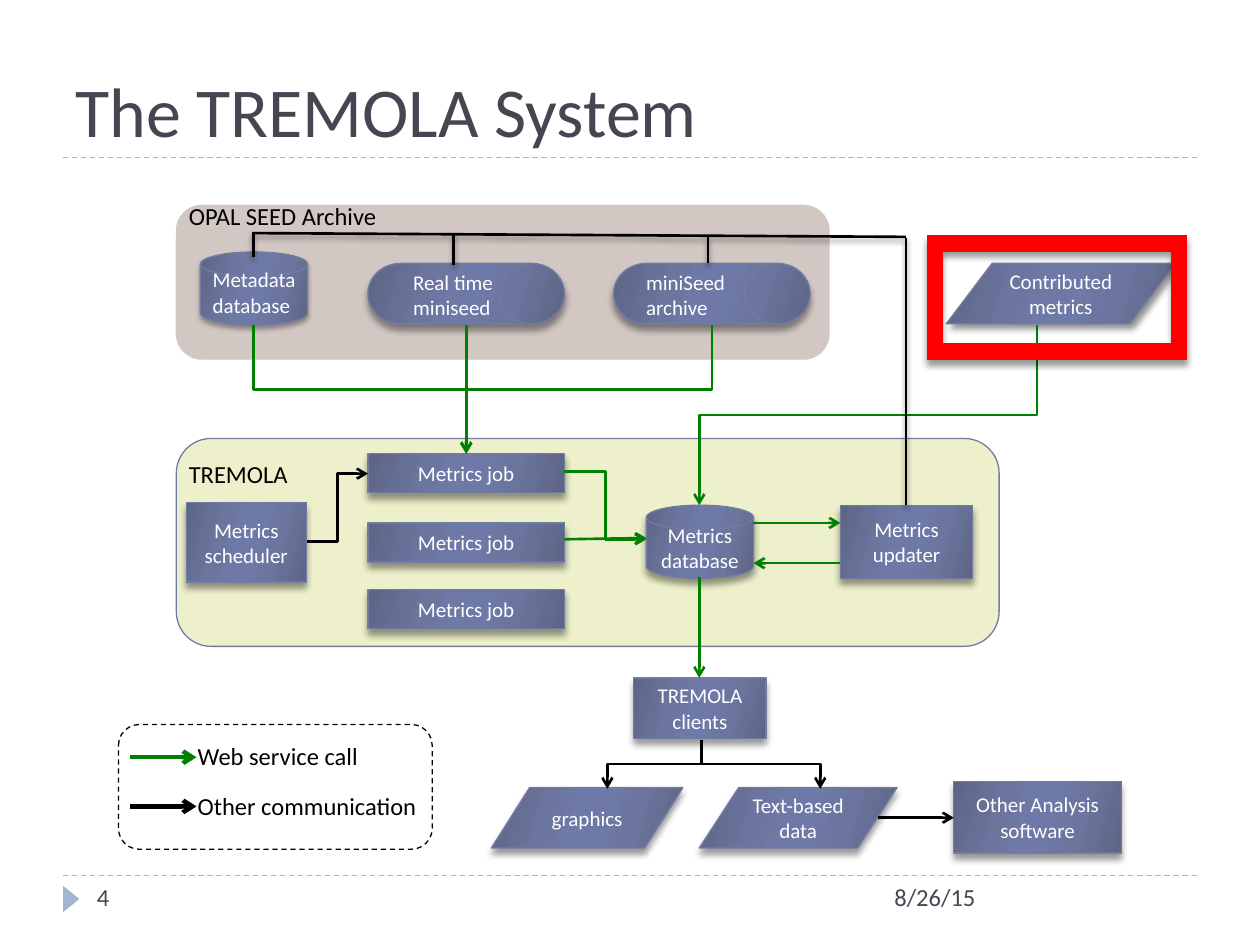
from lxml import etree
from pptx import Presentation
from pptx.dml.color import RGBColor
from pptx.enum.dml import MSO_LINE
from pptx.enum.shapes import MSO_CONNECTOR, MSO_SHAPE
from pptx.enum.text import MSO_ANCHOR, PP_ALIGN
from pptx.oxml.ns import qn
from pptx.util import Inches, Pt

PROCESS = MSO_SHAPE.FLOWCHART_PROCESS
DATA = MSO_SHAPE.FLOWCHART_DATA
DISK = MSO_SHAPE.FLOWCHART_MAGNETIC_DISK
DRUM = MSO_SHAPE.FLOWCHART_DIRECT_ACCESS_STORAGE
ROUNDED = MSO_SHAPE.ROUNDED_RECTANGLE
TRIANGLE = MSO_SHAPE.ISOSCELES_TRIANGLE
FRAME = MSO_SHAPE.FRAME
STRAIGHT, ELBOW = MSO_CONNECTOR.STRAIGHT, MSO_CONNECTOR.ELBOW
DASH = MSO_LINE.DASH
TOP, MIDDLE, BOTTOM = MSO_ANCHOR.TOP, MSO_ANCHOR.MIDDLE, MSO_ANCHOR.BOTTOM
LEFT, CENTER = PP_ALIGN.LEFT, PP_ALIGN.CENTER

FONT = "Calibri"
BLACK, WHITE, GREEN, RED = "000000", "FFFFFF", "008000", "FF0000"
SLATE, RULE, BORDER = "464653", "9FB8CD", "727CA3"
STOPS = [(0, "5D6585"), (30, "6B759E"), (45, "6E79A7"),
         (55, "6E79A7"), (73, "6B759E"), (100, "5D6585")]
NODE_SHADOW = (40, 4, 3.4, 90)
DISK_SHADOW = (35, 3.1, 1.8, 90)
INPUT_SHADOW = (43, 4, 3, 45)
LINE_SHADOW = (40, 3, 2, 90)


def color(value):
    """Turn a hex string into a colour."""
    return RGBColor.from_string(value)


def add_shadow(effects, shadow):
    """Put an outer shadow (opacity, blur, distance, angle) in an effect list."""
    opacity, blur, distance, angle = shadow
    outer = etree.SubElement(effects, qn("a:outerShdw"), blurRad=str(Pt(blur)),
                             dist=str(Pt(distance)), dir=str(angle * 60000),
                             rotWithShape="0")
    tone = etree.SubElement(outer, qn("a:srgbClr"), val=BLACK)
    etree.SubElement(tone, qn("a:alpha"), val=str(opacity * 1000))


def fill_gradient(shape):
    """Fill a shape with the slate gradient."""
    shape.fill.gradient()
    shape.fill.gradient_angle = 344
    stops = shape.fill._xPr.find(".//" + qn("a:gsLst"))
    for stop in list(stops):
        stops.remove(stop)
    for position, tone in STOPS:
        stop = etree.SubElement(stops, qn("a:gs"), pos=str(position * 1000))
        etree.SubElement(stop, qn("a:srgbClr"), val=tone)


def write(shape, lines, size, tone, align=LEFT, anchor=TOP, wrap=True, gap=0):
    """Write one paragraph for each line of text."""
    frame = shape.text_frame
    frame.word_wrap = wrap
    frame.vertical_anchor = anchor
    for index, line in enumerate(lines):
        para = frame.add_paragraph() if index else frame.paragraphs[0]
        para.alignment = align
        para.space_before = Pt(gap if index else 0)
        span = para.add_run()
        span.text = line
        span.font.color.rgb = color(tone)
        for name, value in {"name": FONT, "size": Pt(size)}.items():
            setattr(span.font, name, value)


def add_text(page, place, lines, size=14, tone=BLACK, **layout):
    """Add a text box."""
    box = page.shapes.add_textbox(*map(Inches, place))
    write(box, lines, size, tone, **layout)


def add_panel(page, kind, place, fill=None, border=None, dash=None, shadow=None):
    """Add a shape with a plain fill or none."""
    shape = page.shapes.add_shape(kind, *map(Inches, place))
    if fill:
        shape.fill.solid()
        shape.fill.fore_color.rgb = color(fill)
    else:
        shape.fill.background()
    if border:
        shape.line.color.rgb = color(border)
        shape.line.width = Pt(0.75)
        shape.line.dash_style = dash
    else:
        shape.line.fill.background()
    shape.shadow.inherit = False
    if shadow:
        add_shadow(shape._element.spPr.find(qn("a:effectLst")), shadow)
    return shape


def add_node(page, kind, place, label=None, shadow=NODE_SHADOW):
    """Add a gradient diagram node with a centred label."""
    node = add_panel(page, kind, place, border=BORDER, shadow=shadow)
    fill_gradient(node)
    if label:
        write(node, [label], 12, WHITE, align=CENTER, anchor=MIDDLE)


def finish_line(line, tone, width, arrow=True, dash=None, shadow=None):
    """Set the stroke, arrowhead and effects of a connector."""
    line.line.color.rgb = color(tone)
    line.line.width = Pt(width)
    line.line.dash_style = dash
    properties = line._element.spPr
    if arrow:
        etree.SubElement(properties.find(qn("a:ln")), qn("a:tailEnd"), type="arrow")
    effects = etree.SubElement(properties, qn("a:effectLst"))
    if shadow:
        add_shadow(effects, shadow)


def add_line(page, start, end, tone=BLACK, width=1.5, kind=STRAIGHT, **style):
    """Add a connector; an elbow leaves its start horizontally."""
    line = page.shapes.add_connector(kind, *map(Inches, (*start, *end)))
    finish_line(line, tone, width, **style)


def add_drop(page, start, end, tone):
    """Add an elbow arrow that leaves its start downwards."""
    (x1, y1), (x2, y2) = start, end
    middle_x, middle_y = (x1 + x2) / 2, (y1 + y2) / 2
    half_long, half_wide = (y2 - y1) / 2, abs(x2 - x1) / 2
    side = 1 if x2 > x1 else -1
    corners = (middle_x + side * half_long, middle_y - half_wide,
               middle_x - side * half_long, middle_y + half_wide)
    line = page.shapes.add_connector(ELBOW, *map(Inches, corners))
    turn = 270 if side > 0 else 90
    line._element.spPr.find(qn("a:xfrm")).set("rot", str(turn * 60000))
    finish_line(line, tone, 1.5)


def add_page_frame(page):
    """Add the title, the rules and the footer."""
    for y in (6.95, 1.25):
        add_line(page, (0.5, y), (9.5, y), RULE, 0.75, arrow=False, dash=DASH)
    add_panel(page, TRIANGLE, (0.46, 7.07, 0.21, 0.13), RULE).rotation = 90
    add_text(page, (0.5, 0.17, 9, 1.08), ["The TREMOLA System"], 40, SLATE, anchor=BOTTOM)
    add_text(page, (7, 6.95, 2.5, 0.4), ["8/26/15"], tone=SLATE)
    add_text(page, (0.67, 6.95, 2.17, 0.4), ["4"], tone=SLATE)


def add_legend(page):
    """Add the key to the arrow colours."""
    add_panel(page, ROUNDED, (0.94, 5.75, 2.49, 0.99), border=BLACK, dash=DASH)
    add_text(page, (1.47, 5.83, 1.94, 0.74),
             ["Web service call", "Other communication"], gap=12)
    for y, tone in ((6.01, GREEN), (6.4, BLACK)):
        add_line(page, (1.03, y), (1.56, y), tone, 2.5)


def add_clients(page):
    """Add the clients and their outputs."""
    add_node(page, PROCESS, (5.03, 5.38, 1.05, 0.48), "TREMOLA clients")
    add_node(page, PROCESS, (7.57, 6.2, 1.33, 0.57), "Other Analysis software")
    add_node(page, DATA, (5.55, 6.25, 1.57, 0.48), "Text-based data")
    add_node(page, DATA, (3.9, 6.25, 1.52, 0.48), "graphics")
    for x in (6.51, 4.82):
        add_drop(page, (5.57, 5.87), (x, 6.26), BLACK)
    add_line(page, (6.97, 6.49), (7.57, 6.49))


def add_system(page):
    """Add the metrics system panel and its parts."""
    add_panel(page, ROUNDED, (1.4, 3.48, 6.53, 1.65), "EDF0CA", BORDER)
    add_node(page, PROCESS, (6.67, 4.01, 1.05, 0.58), "Metrics updater")
    add_node(page, PROCESS, (1.48, 3.99, 0.95, 0.63), "Metrics scheduler")
    for y in (3.6, 4.15, 4.68):
        add_node(page, PROCESS, (2.92, y, 1.56, 0.31), "Metrics job")
    add_node(page, DISK, (5.13, 4.01, 0.85, 0.58), "Metrics database")
    add_line(page, (2.44, 4.3), (2.92, 3.76), kind=ELBOW)
    add_line(page, (4.48, 4.28), (5.13, 4.27), GREEN)
    add_line(page, (4.48, 3.74), (5.13, 4.28), GREEN, kind=ELBOW)
    add_line(page, (5.98, 4.15), (6.67, 4.15), GREEN)
    add_line(page, (6.67, 4.47), (5.98, 4.47), GREEN)
    add_text(page, (1.4, 3.59, 1.23, 0.34), ["TREMOLA"])
    add_node(page, DATA, (7.51, 2.09, 1.82, 0.48), "Contributed metrics", INPUT_SHADOW)
    add_drop(page, (8.23, 2.58), (5.55, 4.01), GREEN)


def add_archive(page):
    """Add the archive panel, its stores and their calls."""
    add_panel(page, ROUNDED, (1.4, 1.63, 5.18, 1.22), "D2C7C3", "D2C7C3")
    add_node(page, DISK, (1.59, 2, 0.85, 0.58), shadow=DISK_SHADOW)
    for x in (2.92, 4.87):
        add_node(page, DRUM, (x, 2.09, 1.56, 0.48))
    add_text(page, (1.4, 1.55, 1.78, 0.34), ["OPAL SEED Archive"])
    add_line(page, (3.7, 2.58), (3.7, 3.6), GREEN)
    for x in (2.01, 5.65):
        add_drop(page, (x, 2.58), (3.7, 3.6), GREEN)
    for x, y, lines in ((3.18, 2.09, ["Real time", "miniseed"]),
                        (1.59, 2.07, ["Metadata", "database"]),
                        (5.03, 2.09, ["miniSeed", "archive"])):
        add_text(page, (x, y, 0.9, 0.5), lines, 12, WHITE, wrap=False)


def add_update_bus(page):
    """Add the lines that join the updater to the archive."""
    for start, end in (((2.01, 1.85), (7.19, 1.88)), ((7.19, 4.01), (7.19, 1.89)),
                       ((2.01, 1.84), (2.01, 2.04)), ((5.62, 1.88), (5.62, 2.09)),
                       ((3.6, 1.85), (3.6, 2.1))):
        add_line(page, start, end, arrow=False, shadow=LINE_SHADOW)


def main():
    """Build and save the slide."""
    deck = Presentation()
    deck.slide_width, deck.slide_height = Inches(10), Inches(7.5)
    page = deck.slides.add_slide(deck.slide_layouts[6])
    add_page_frame(page)
    add_legend(page)
    add_clients(page)
    add_system(page)
    add_archive(page)
    add_line(page, (5.55, 4.58), (5.55, 5.38), GREEN)
    add_update_bus(page)
    add_panel(page, FRAME, (7.36, 1.87, 2.06, 0.98), RED, RED, shadow=NODE_SHADOW)
    deck.save("out.pptx")


if __name__ == "__main__":
    main()
